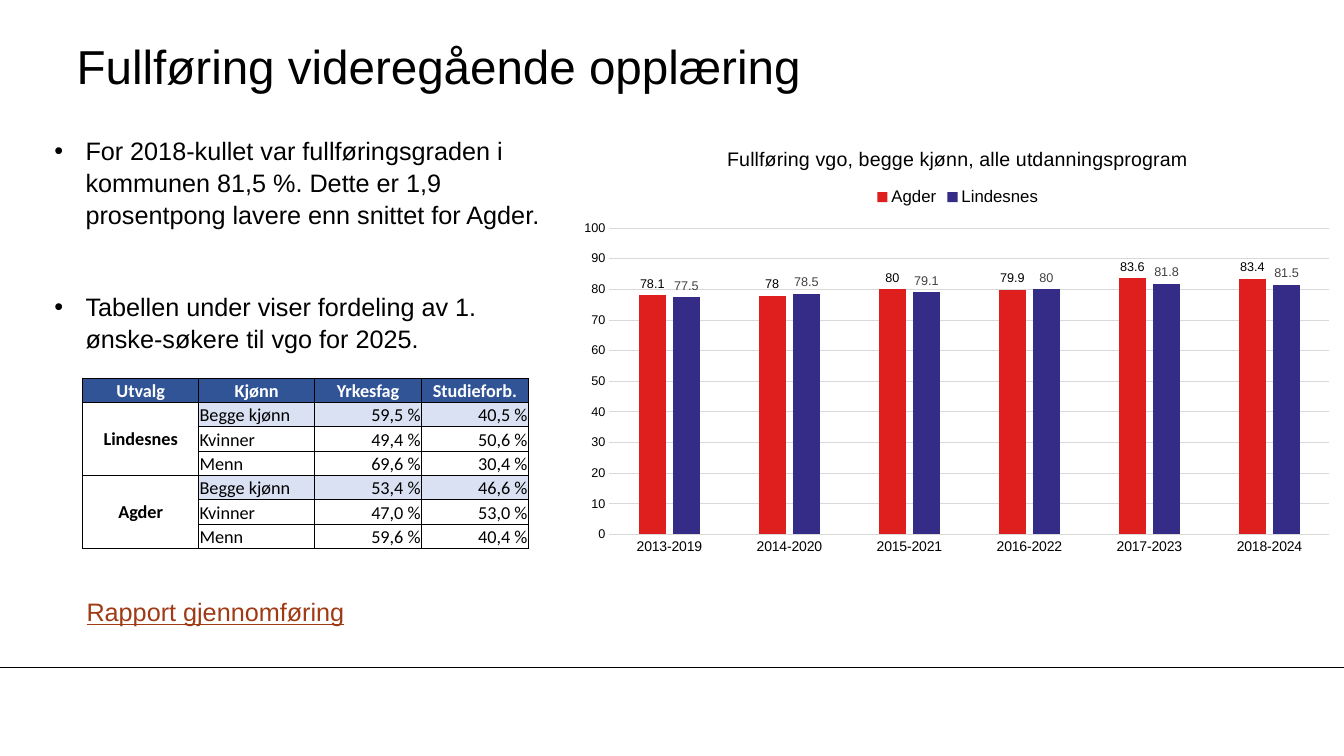
import pptx
import pptx.chart.data
import pptx.dml.color
import pptx.enum.chart
import pptx.enum.shapes
import pptx.enum.text
import pptx.oxml
import pptx.oxml.ns
import pptx.util
from lxml import etree

Inches, Pt = pptx.util.Inches, pptx.util.Pt
RGBColor = pptx.dml.color.RGBColor
ALIGN = pptx.enum.text.PP_ALIGN
ANCHOR = pptx.enum.text.MSO_ANCHOR
CHART = pptx.enum.chart

# Content
TITLE = "Fullføring videregående opplæring"
BULLETS = [
    "For 2018-kullet var fullføringsgraden i kommunen 81,5 %. "
    "Dette er 1,9 prosentpong lavere enn snittet for Agder.",
    "Tabellen under viser fordeling av 1. ønske-søkere til vgo for 2025.",
]
REPORT = "Rapport gjennomføring"
HEADINGS = ["Utvalg", "Kjønn", "Yrkesfag", "Studieforb."]
APPLICANTS = {
    "Lindesnes": [("Begge kjønn", "59,5 %", "40,5 %"),
                  ("Kvinner", "49,4 %", "50,6 %"),
                  ("Menn", "69,6 %", "30,4 %")],
    "Agder": [("Begge kjønn", "53,4 %", "46,6 %"),
              ("Kvinner", "47,0 %", "53,0 %"),
              ("Menn", "59,6 %", "40,4 %")],
}
CHART_TITLE = "Fullføring vgo, begge kjønn, alle utdanningsprogram"
COHORTS = ["2013-2019", "2014-2020", "2015-2021", "2016-2022", "2017-2023", "2018-2024"]

# Colours
BLACK = RGBColor(0x00, 0x00, 0x00)
WHITE = RGBColor(0xFF, 0xFF, 0xFF)
HEADER_BLUE = RGBColor(0x30, 0x54, 0x96)
PALE_BLUE = RGBColor(0xD9, 0xE1, 0xF2)
LINK_BROWN = RGBColor(0x9F, 0x3A, 0x14)
GRID_GREY = RGBColor(0xD9, 0xD9, 0xD9)
LABEL_GREY = RGBColor(0x40, 0x40, 0x40)
RED = RGBColor(0xDF, 0x1F, 0x1D)
INDIGO = RGBColor(0x34, 0x2C, 0x86)

# Name, values, bar colour, label colour
SERIES = [
    ("Agder", (78.1, 78, 80, 79.9, 83.6, 83.4), RED, BLACK),
    ("Lindesnes", (77.5, 78.5, 79.1, 80, 81.8, 81.5), INDIGO, LABEL_GREY),
]


def set_all(target, values):
    for name, value in values.items():
        setattr(target, name, value)


def style(font, size, color=BLACK, name="Arial", **extra):
    set_all(font, {"size": Pt(size), "name": name, **extra})
    font.color.rgb = color


def area(left, top, width, height):
    return [Inches(value) for value in (left, top, width, height)]


def fill_cell(cell, text, fill, align, color=BLACK, bold=False, anchor=ANCHOR.BOTTOM):
    set_all(cell, {"margin_left": Inches(0.01), "margin_right": Inches(0.01),
                   "margin_top": Inches(0.01), "margin_bottom": 0,
                   "vertical_anchor": anchor, "text": text})
    para = cell.text_frame.paragraphs[0]
    para.alignment = align
    style(para.runs[0].font, 13, color, "Calibri", bold=bold)
    cell.fill.solid()
    cell.fill.fore_color.rgb = fill


def border_cell(cell):
    properties = cell._tc.get_or_add_tcPr()
    for position, side in enumerate(("lnL", "lnR", "lnT", "lnB")):
        properties.insert(position, pptx.oxml.parse_xml(
            f'<a:{side} {pptx.oxml.ns.nsdecls("a")} w="{Pt(0.5)}">'
            f'<a:solidFill><a:srgbClr val="{BLACK}"/></a:solidFill></a:{side}>'))


deck = pptx.Presentation()
set_all(deck, {"slide_width": Inches(13.33), "slide_height": Inches(7.5)})
page = deck.slides.add_slide(deck.slide_layouts[5])

# Footer rule
rule = page.shapes.add_connector(pptx.enum.shapes.MSO_CONNECTOR.STRAIGHT,
                                 *area(0, 6.62, 13.33, 6.62))
rule.line.color.rgb = BLACK
rule.line.width = Pt(0.75)
etree.SubElement(rule._element.spPr, pptx.oxml.ns.qn("a:effectLst"))

# Title
title = page.shapes.title
set_all(title, dict(zip(("left", "top", "width", "height"), area(0.76, 0.27, 11.1, 0.75))))
set_all(title.text_frame, {"text": TITLE, "vertical_anchor": ANCHOR.MIDDLE, "word_wrap": True,
                           "margin_left": 0, "margin_right": 0,
                           "margin_top": 0, "margin_bottom": 0})
title.text_frame.paragraphs[0].alignment = ALIGN.LEFT
style(title.text_frame.paragraphs[0].font, 34)

# Bullets
frame = page.shapes.add_textbox(*area(0.44, 1.28, 5.17, 2.22)).text_frame
set_all(frame, {"word_wrap": True, "text": "\n".join(BULLETS)})
for number, para in enumerate(frame.paragraphs):
    set_all(para, {"line_spacing": 1.05, "space_before": Pt(43.5 * number)})
    properties = para._p.get_or_add_pPr()
    properties.set("marL", str(Inches(0.31)))
    properties.set("indent", str(-Inches(0.31)))
    etree.SubElement(properties, pptx.oxml.ns.qn("a:buFont")).set("typeface", "Arial")
    etree.SubElement(properties, pptx.oxml.ns.qn("a:buChar")).set("char", "•")
    style(para.font, 18)

# Table of first-choice applicants
rows = 1 + sum(len(group) for group in APPLICANTS.values())
table = page.shapes.add_table(rows, len(HEADINGS), *area(0.82, 3.75, 4.42, 1.69)).table
for column, width in zip(table.columns, (1.15, 1.15, 1.06, 1.06)):
    column.width = Inches(width)
for row in table.rows:
    row.height = Inches(1.69 / rows)
for column, heading in enumerate(HEADINGS):
    fill_cell(table.cell(0, column), heading, HEADER_BLUE, ALIGN.CENTER, WHITE, True)
top = 1
for place, group in APPLICANTS.items():
    table.cell(top, 0).merge(table.cell(top + len(group) - 1, 0))
    fill_cell(table.cell(top, 0), place, WHITE, ALIGN.CENTER, bold=True, anchor=ANCHOR.MIDDLE)
    for offset, values in enumerate(group):
        for column, value in enumerate(values, 1):
            fill_cell(table.cell(top + offset, column), value,
                      WHITE if offset else PALE_BLUE,
                      ALIGN.LEFT if column == 1 else ALIGN.RIGHT)
    top += len(group)
for cell in table.iter_cells():
    border_cell(cell)

# Report reference
frame = page.shapes.add_textbox(*area(0.76, 5.87, 2.81, 0.4)).text_frame
set_all(frame, {"word_wrap": True, "text": REPORT})
style(frame.paragraphs[0].runs[0].font, 18, LINK_BROWN, underline=True)

# Completion chart
data = pptx.chart.data.CategoryChartData()
data.categories = COHORTS
for name, values, *colors in SERIES:
    data.add_series(name, values)
chart = page.shapes.add_chart(CHART.XL_CHART_TYPE.COLUMN_CLUSTERED,
                              *area(5.66, 1.28, 7.68, 4.28), data).chart
style(chart.font, 10)
chart.has_title = True
chart.chart_title.include_in_layout = False
chart.chart_title.text_frame.text = CHART_TITLE
style(chart.chart_title.text_frame.paragraphs[0].runs[0].font, 14, bold=False)
chart.has_legend = True
set_all(chart.legend, {"position": CHART.XL_LEGEND_POSITION.TOP, "include_in_layout": False})
style(chart.legend.font, 12)

plot = chart.plots[0]
set_all(plot, {"gap_width": 219, "overlap": -27, "vary_by_categories": False})
for series, (name, values, bar_color, label_color) in zip(plot.series, SERIES):
    series.format.fill.solid()
    series.format.fill.fore_color.rgb = bar_color
    labels = series.data_labels
    set_all(labels, {"show_value": True, "position": CHART.XL_LABEL_POSITION.OUTSIDE_END})
    style(labels.font, 9, label_color)

# Axes
for axis, size in ((chart.category_axis, 10), (chart.value_axis, 9)):
    set_all(axis, {"major_tick_mark": CHART.XL_TICK_MARK.NONE,
                   "minor_tick_mark": CHART.XL_TICK_MARK.NONE})
    style(axis.tick_labels.font, size)
scale = chart.value_axis
set_all(scale, {"minimum_scale": 0, "maximum_scale": 100, "major_unit": 10,
                "has_major_gridlines": True})
set_all(scale.tick_labels, {"number_format": "#,##0", "number_format_is_linked": False})
scale.format.line.fill.background()
for line in (scale.major_gridlines.format.line, chart.category_axis.format.line):
    line.color.rgb = GRID_GREY
    line.width = Pt(0.75)

# Plot area as shares of the chart frame
plot_area = chart._chartSpace.chart.plotArea
for old in plot_area.findall(pptx.oxml.ns.qn("c:layout")):
    plot_area.remove(old)
layout = pptx.oxml.parse_xml(f'<c:layout {pptx.oxml.ns.nsdecls("c")}><c:manualLayout/></c:layout>')
for tag, value in (("layoutTarget", "inner"), ("xMode", "edge"), ("yMode", "edge"),
                   ("x", "0.05"), ("y", "0.23"), ("w", "0.93"), ("h", "0.71")):
    etree.SubElement(layout[0], pptx.oxml.ns.qn(f"c:{tag}")).set("val", value)
plot_area.insert(0, layout)

deck.save("out.pptx")
